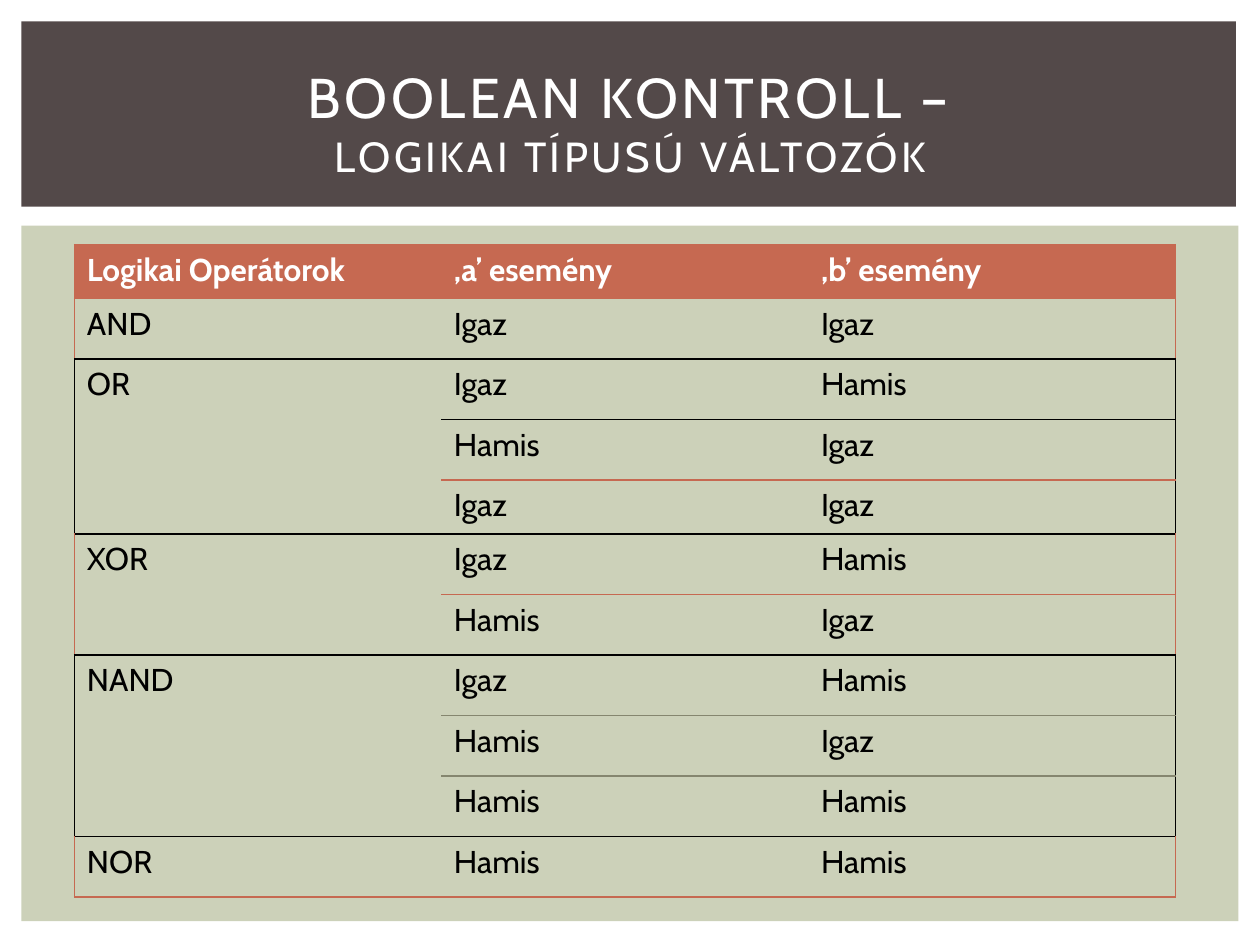
from lxml.etree import SubElement
from pptx import Presentation
from pptx.dml.color import RGBColor
from pptx.enum.shapes import MSO_SHAPE
from pptx.enum.text import MSO_ANCHOR, PP_ALIGN
from pptx.oxml.ns import qn
from pptx.util import Inches, Pt

COLORS = {
    "white": "FFFFFF",
    "black": "000000",
    "banner": "534949",
    "panel": "CCD1B9",
    "accent": "C66951",
    "muted": "85866F",
}
FONT = "Cabin"
TITLE = [("BOOLEAN KONTROLL –", 32), ("LOGIKAI TÍPUSÚ VÁLTOZÓK", 24)]
HEADERS = ["Logikai Operátorok", "‚a’ esemény", "‚b’ esemény"]
GROUPS = [
    ("AND", [("Igaz", "Igaz")], "accent", []),
    ("OR", [("Igaz", "Hamis"), ("Hamis", "Igaz"), ("Igaz", "Igaz")],
     "black", ["black", "accent"]),
    ("XOR", [("Igaz", "Hamis"), ("Hamis", "Igaz")], "accent", ["accent"]),
    ("NAND", [("Igaz", "Hamis"), ("Hamis", "Igaz"), ("Hamis", "Hamis")],
     "black", ["muted", "muted"]),
    ("NOR", [("Hamis", "Hamis")], "accent", []),
]
PANELS = [
    ("panel", 0.17, 1.79, 9.66, 5.52),
    ("banner", 0.17, 0.17, 9.64, 1.47),
]
TITLE_BOX = (0.42, 0.39, 9.17, 1.15)
TABLE_LEFT, TABLE_TOP, TABLE_WIDTH = 0.59, 1.94, 8.74
ROW_HEIGHT, SHORT_ROW_HEIGHT, SHORT_ROWS = 0.48, 0.43, (0, 4)


def color(name):
    return RGBColor.from_string(COLORS[name])


def add_text(paragraph, text, size=18, fill="black", bold=False, spacing=0):
    run = paragraph.add_run()
    run.text = text
    run.font.name = FONT
    run.font.size = Pt(size)
    run.font.bold = bold
    run.font.color.rgb = color(fill)
    if spacing:
        run._r.get_or_add_rPr().set("spc", str(spacing * 100))


def set_borders(cell, left, right, top, bottom):
    properties = cell._tc.get_or_add_tcPr()
    sides = zip(("a:lnL", "a:lnR", "a:lnT", "a:lnB"), (left, right, top, bottom))
    for position, (tag, name) in enumerate(sides):
        line = SubElement(properties, qn(tag))
        properties.insert(position, line)
        if name:
            line.set("w", str(Pt(1 if name == "black" else 0.79)))
            fill = SubElement(line, qn("a:solidFill"))
            SubElement(fill, qn("a:srgbClr")).set("val", COLORS[name])
        else:
            line.set("w", "0")
            SubElement(line, qn("a:noFill"))


def add_panel(slide, fill, *box):
    shape = slide.shapes.add_shape(MSO_SHAPE.RECTANGLE, *map(Inches, box))
    shape.shadow.inherit = False
    shape.fill.solid()
    shape.fill.fore_color.rgb = color(fill)
    shape.line.fill.background()


def add_title(slide):
    frame = slide.shapes.add_textbox(*map(Inches, TITLE_BOX)).text_frame
    frame.word_wrap = True
    frame.vertical_anchor = MSO_ANCHOR.MIDDLE
    paragraph = frame.paragraphs[0]
    paragraph.alignment = PP_ALIGN.CENTER
    for index, (text, size) in enumerate(TITLE):
        if index:
            paragraph.add_line_break()
        add_text(paragraph, text, size=size, fill="white", spacing=2)


def fill_row(table, row, texts, outline, top, bottom, header=False):
    last = len(HEADERS) - 1
    for column, text in enumerate(texts):
        cell = table.cell(row, column)
        if header:
            cell.fill.solid()
            cell.fill.fore_color.rgb = color("accent")
        else:
            cell.fill.background()
        if text:
            add_text(cell.text_frame.paragraphs[0], text, bold=header,
                     fill="white" if header else "black")
        set_borders(cell, outline if column == 0 else None,
                    outline if column == last else None,
                    top[column], bottom[column])


def add_operator_table(slide):
    row_count = 1 + sum(len(pairs) for _, pairs, _, _ in GROUPS)
    heights = [SHORT_ROW_HEIGHT if row in SHORT_ROWS else ROW_HEIGHT
               for row in range(row_count)]
    table = slide.shapes.add_table(
        row_count, len(HEADERS), Inches(TABLE_LEFT), Inches(TABLE_TOP),
        Inches(TABLE_WIDTH), Inches(sum(heights))).table
    table.horz_banding = False
    for column in table.columns:
        column.width = Inches(TABLE_WIDTH / len(HEADERS))
    for row, height in zip(table.rows, heights):
        row.height = Inches(height)

    accent_row = ["accent"] * len(HEADERS)
    fill_row(table, 0, HEADERS, "accent", accent_row, accent_row, header=True)
    row = 1
    above = accent_row
    for group, (operator, pairs, outline, dividers) in enumerate(GROUPS):
        if len(pairs) > 1:
            table.cell(row, 0).merge(table.cell(row + len(pairs) - 1, 0))
        closing = "accent" if group == len(GROUPS) - 1 else "black"
        inner = [[None, divider, divider] for divider in dividers]
        below_lines = inner + [[closing] * len(HEADERS)]
        for index, (pair, below) in enumerate(zip(pairs, below_lines)):
            label = operator if index == 0 else ""
            fill_row(table, row, (label, *pair), outline, above, below)
            above = below
            row += 1


def main():
    presentation = Presentation()
    presentation.slide_width = Inches(10)
    presentation.slide_height = Inches(7.5)
    slide = presentation.slides.add_slide(presentation.slide_layouts[6])
    for panel in PANELS:
        add_panel(slide, *panel)
    add_operator_table(slide)
    add_title(slide)
    presentation.save("out.pptx")


if __name__ == "__main__":
    main()
